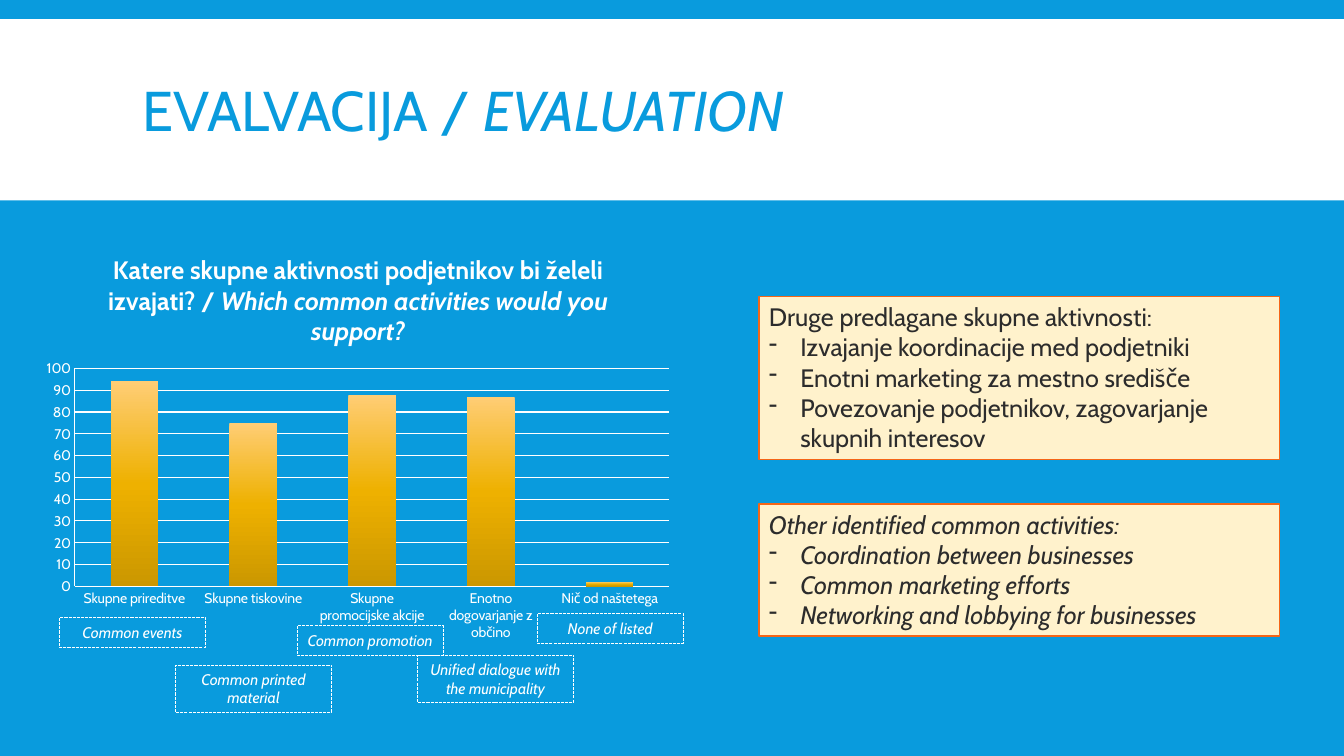
import copy
import pptx
import pptx.util
import pptx.chart.data
import pptx.dml.color
import pptx.enum.chart
import pptx.enum.dml
import pptx.enum.shapes
import pptx.enum.text
import pptx.oxml
import pptx.oxml.ns

Cm = pptx.util.Cm
Pt = pptx.util.Pt
Align = pptx.enum.text.PP_ALIGN

FONT = "Cabin"
COLOURS = {
    "blue": "099BDD", "white": "FFFFFF", "cream": "FFF2CC", "orange": "F56617",
    "ink": "2C2C2C", "bar_top": "FFCD75", "bar_middle": "EEB100", "bar_foot": "CB9700",
}
HEADING = [("EVALVACIJA / ", False), ("EVALUATION", True)]
QUESTION = [
    ("Katere skupne aktivnosti podjetnikov bi želeli izvajati? / ", False),
    ("Which common activities would you support?", True),
]
SUPPORT = {
    "Skupne prireditve": 94,
    "Skupne tiskovine": 75,
    "Skupne promocijske akcije": 88,
    "Enotno dogovarjanje z občino": 87,
    "Nič od naštetega": 2,
}
ONE_LINE = (3.68, 0.74)
TWO_LINES = (3.94, 1.19)
LABELS_BEHIND = [
    ("Unified dialogue with the municipality", 10.52, 16.51, TWO_LINES),
    ("Common promotion", 7.49, 15.77, ONE_LINE),
]
LABELS_FRONT = [
    ("Common events", 1.5, 15.57, ONE_LINE),
    ("Common printed material", 4.42, 16.76, TWO_LINES),
    ("None of listed", 13.54, 15.47, ONE_LINE),
]
PANELS = [
    (7.47, 4.11, False, "Druge predlagane skupne aktivnosti:", [
        "Izvajanje koordinacije med podjetniki",
        "Enotni marketing za mestno središče",
        "Povezovanje podjetnikov, zagovarjanje skupnih interesov",
    ]),
    (12.7, 3.33, True, "Other identified common activities:", [
        "Coordination between businesses",
        "Common marketing efforts",
        "Networking and lobbying for businesses",
    ]),
]
PLOT_LAYOUT = {"x": 0.063, "y": 0.32, "w": 0.917, "h": 0.53}


def rgb(name):
    return pptx.dml.color.RGBColor.from_string(COLOURS[name])


def style(font, size, colour, italic=False, bold=False):
    font.name = FONT
    font.size = Pt(size)
    font.color.rgb = rgb(colour)
    font.italic = italic
    font.bold = bold


def add_span(para, text, size, colour, italic=False, bold=False):
    span = para.add_run()
    span.text = text
    style(span.font, size, colour, italic, bold)


def add_box(page, left, top, width, height, fill=None, line=None, weight=0.75):
    box = page.shapes.add_shape(pptx.enum.shapes.MSO_SHAPE.RECTANGLE,
                                Cm(left), Cm(top), Cm(width), Cm(height))
    box.shadow.inherit = False
    if fill:
        box.fill.solid()
        box.fill.fore_color.rgb = rgb(fill)
    else:
        box.fill.background()
    if line:
        box.line.color.rgb = rgb(line)
        box.line.width = Pt(weight)
    else:
        box.line.fill.background()
    box.text_frame.word_wrap = True
    box.text_frame.vertical_anchor = pptx.enum.text.MSO_ANCHOR.TOP
    return box


def add_heading(page):
    add_box(page, 0, 0.48, 33.87, 4.57, "white")
    box = page.shapes.add_textbox(Cm(3.35), Cm(0.79), Cm(27.18), Cm(4.19))
    frame = box.text_frame
    frame.word_wrap = True
    frame.vertical_anchor = pptx.enum.text.MSO_ANCHOR.MIDDLE
    para = frame.paragraphs[0]
    para.line_spacing = 0.85
    for text, italic in HEADING:
        add_span(para, text, 40, "blue", italic)


def add_labels(page, labels):
    for text, left, top, size in labels:
        box = add_box(page, left, top, *size, line="white")
        box.line.dash_style = pptx.enum.dml.MSO_LINE.SQUARE_DOT
        para = box.text_frame.paragraphs[0]
        para.alignment = Align.CENTER
        add_span(para, text, 11, "white", True)


def paint_bars(series):
    fill = series.format.fill
    fill.gradient()
    fill.gradient_angle = 270
    stop_list = series.format.fill.gradient_stops
    stop_list[0].color.rgb = rgb("bar_top")
    stop_list[1].color.rgb = rgb("bar_foot")
    holder = next(series._element.iter(pptx.oxml.ns.qn("a:gsLst")))
    holder.insert(1, copy.deepcopy(holder[0]))
    middle = fill.gradient_stops[1]
    middle.position = 0.5
    middle.color.rgb = rgb("bar_middle")


def place_plot(chart):
    parts = "".join(f'<c:{key} val="{value}"/>' for key, value in PLOT_LAYOUT.items())
    layout = pptx.oxml.parse_xml(
        f'<c:layout {pptx.oxml.ns.nsdecls("c")}><c:manualLayout><c:layoutTarget val="inner"/>'
        f'<c:xMode val="edge"/><c:yMode val="edge"/>{parts}</c:manualLayout></c:layout>')
    plot_area = chart._chartSpace.chart.plotArea
    for old in plot_area.findall(pptx.oxml.ns.qn("c:layout")):
        plot_area.remove(old)
    plot_area.insert(0, layout)


def add_support_chart(page):
    data = pptx.chart.data.CategoryChartData()
    data.categories = list(SUPPORT)
    data.add_series("Series 1", list(SUPPORT.values()))
    chart = page.shapes.add_chart(pptx.enum.chart.XL_CHART_TYPE.COLUMN_CLUSTERED,
                                  Cm(0.86), Cm(5.97), Cm(16.33), Cm(10.36), data).chart
    style(chart.font, 10, "white")
    chart.has_legend = False
    chart.has_title = True
    chart.chart_title.include_in_layout = False
    para = chart.chart_title.text_frame.paragraphs[0]
    para.alignment = Align.CENTER
    for text, italic in QUESTION:
        add_span(para, text, 18, "white", italic, True)
    plot = chart.plots[0]
    plot.gap_width = 150
    plot.vary_by_categories = False
    paint_bars(plot.series[0])
    values = chart.value_axis
    values.minimum_scale = 0
    values.maximum_scale = 100
    values.major_unit = 10
    values.has_major_gridlines = True
    for axis in (chart.category_axis, values):
        axis.major_tick_mark = pptx.enum.chart.XL_TICK_MARK.NONE
        style(axis.tick_labels.font, 10, "white")
    for line in (chart.category_axis.format.line, values.format.line,
                 values.major_gridlines.format.line):
        line.color.rgb = rgb("white")
        line.width = Pt(0.75)
    place_plot(chart)


def add_panels(page):
    for top, height, italic, lead, points in PANELS:
        frame = add_box(page, 19.13, top, 13.11, height, "cream", "orange", 1).text_frame
        para = frame.paragraphs[0]
        para.alignment = Align.LEFT
        add_span(para, lead, 18, "ink", italic)
        for point in points:
            para = frame.add_paragraph()
            para.alignment = Align.LEFT
            properties = para._p.get_or_add_pPr()
            properties.set("marL", str(Cm(0.79)))
            properties.set("indent", str(-Cm(0.79)))
            properties.append(pptx.oxml.parse_xml(
                f'<a:buChar {pptx.oxml.ns.nsdecls("a")} char="-"/>'))
            add_span(para, point, 18, "ink", italic)


def main():
    deck = pptx.Presentation()
    deck.slide_width = Cm(33.87)
    deck.slide_height = Cm(19.05)
    page = deck.slides.add_slide(deck.slide_layouts[6])
    page.background.fill.solid()
    page.background.fill.fore_color.rgb = rgb("blue")
    add_heading(page)
    add_labels(page, LABELS_BEHIND)
    add_support_chart(page)
    add_labels(page, LABELS_FRONT)
    add_panels(page)
    deck.save("out.pptx")


if __name__ == "__main__":
    main()
